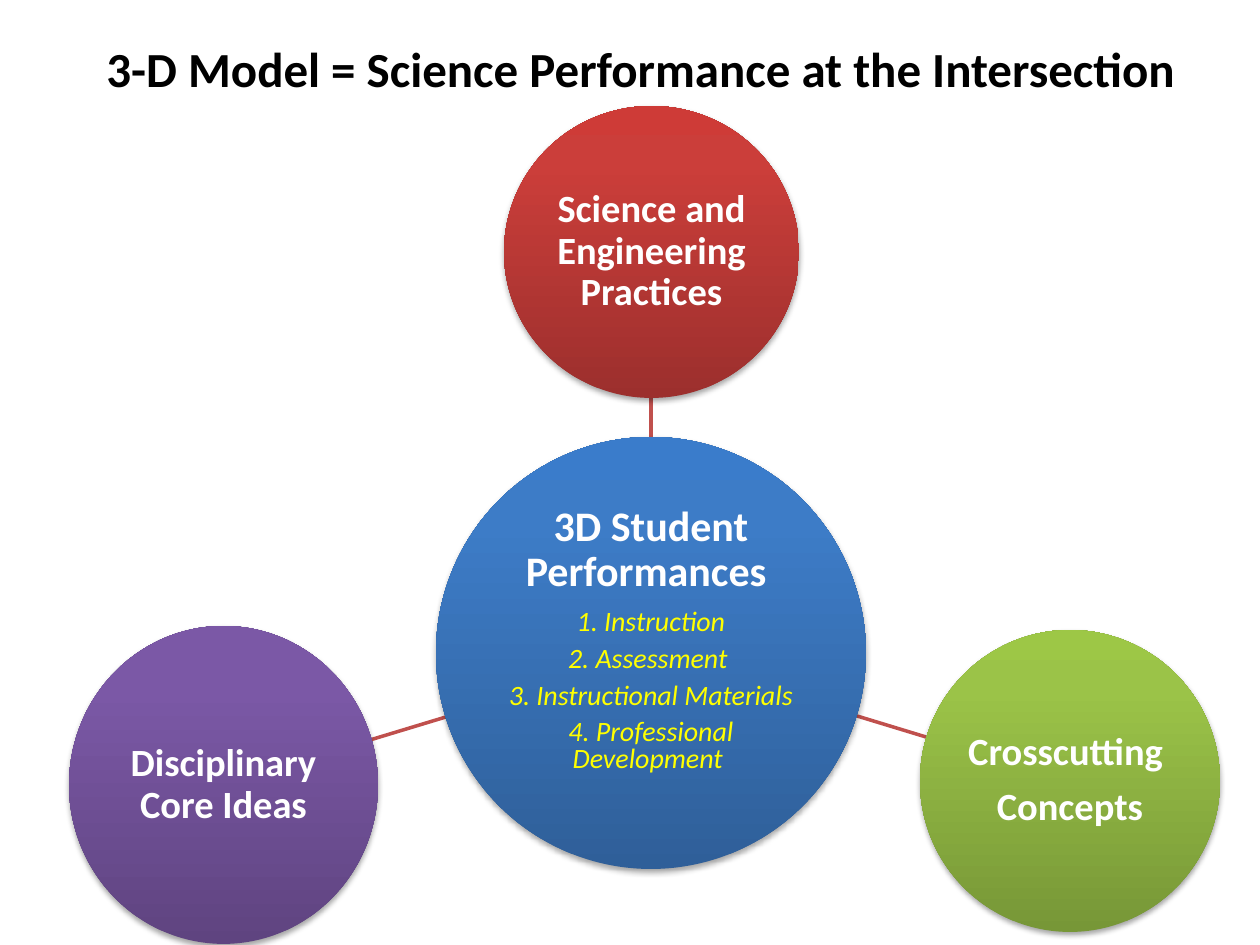
"""Build a slide with three science dimensions linked to a central circle."""
import lxml.etree
import pptx
import pptx.dml.color
import pptx.enum.shapes
import pptx.enum.text
import pptx.oxml
import pptx.oxml.ns
import pptx.util

SCALE = 914400 / 126
COLORS = {
    "title": "000000", "heading": "FFFFFF", "item": "FFFF00", "link": "C0504D",
}
GRADIENTS = {
    "blue": ("2F5F99", "3D7CC7", "3A7CCB"),
    "red": ("9C2F2D", "CB3E3A", "CE3B37"),
    "green": ("779737", "9BC348", "9DC746"),
    "purple": ("5F4480", "7B58A6", "7C57A8"),
}


def px(length):
    return pptx.util.Emu(round(length * SCALE))


def rgb(name):
    return pptx.dml.color.RGBColor.from_string(COLORS[name])


class Diagram:
    def __init__(self, page, font):
        self.page = page
        self.font = font

    def style(self, para, size, color, bold=True, italic=False):
        para.alignment = pptx.enum.text.PP_ALIGN.CENTER
        para.font.name = self.font
        para.font.size = pptx.util.Pt(size)
        para.font.bold = bold
        para.font.italic = italic
        para.font.color.rgb = rgb(color)

    def title(self, text, left, top, width, height):
        box = self.page.shapes.title
        box.left, box.top, box.width, box.height = map(px, (left, top, width, height))
        box.text_frame.text = text
        box.text_frame.vertical_anchor = pptx.enum.text.MSO_ANCHOR.MIDDLE
        self.style(box.text_frame.paragraphs[0], 28, "title")

    def link(self, *ends):
        line = self.page.shapes.add_connector(
            pptx.enum.shapes.MSO_CONNECTOR.STRAIGHT, *map(px, ends))
        line.line.color.rgb = rgb("link")
        line.line.width = pptx.util.Pt(2)
        lxml.etree.SubElement(line._element.spPr, pptx.oxml.ns.qn("a:effectLst"))

    def circle(self, gradient, place, headings, size=22, items=(), bottom=3):
        shape = self.page.shapes.add_shape(
            pptx.enum.shapes.MSO_SHAPE.OVAL, *map(px, place))
        shape.line.fill.background()
        self.shade(shape, GRADIENTS[gradient])
        frame = shape.text_frame
        frame.word_wrap = True
        frame.vertical_anchor = pptx.enum.text.MSO_ANCHOR.MIDDLE
        frame.margin_left = frame.margin_right = frame.margin_top = px(3)
        frame.margin_bottom = px(bottom)
        for index, text in enumerate((*headings, *items)):
            para = frame.add_paragraph() if index else frame.paragraphs[0]
            para.text = text
            if index < len(headings):
                self.style(para, size, "heading")
                para.line_spacing = 0.9
                para.space_after = pptx.util.Pt(round(size * 0.35, 1))
            else:
                self.style(para, 16, "item", bold=False, italic=True)
                para.line_spacing = 0.8
                para.space_after = pptx.util.Pt(5.6)

    def shade(self, shape, colors):
        namespace = pptx.oxml.ns.nsdecls("a")
        stops = "".join(
            f'<a:gs pos="{position}"><a:srgbClr val="{color}"/></a:gs>'
            for position, color in zip((0, 80000, 100000), colors))
        fill = pptx.oxml.parse_xml(
            f'<a:gradFill {namespace} rotWithShape="1"><a:gsLst>{stops}</a:gsLst>'
            '<a:lin ang="16200000" scaled="0"/></a:gradFill>')
        shadow = pptx.oxml.parse_xml(
            f'<a:effectLst {namespace}><a:outerShdw blurRad="40000" dist="23000" '
            'dir="5400000" rotWithShape="0"><a:srgbClr val="000000">'
            '<a:alpha val="35000"/></a:srgbClr></a:outerShdw></a:effectLst>')
        properties = shape._element.spPr
        properties.find(pptx.oxml.ns.qn("a:prstGeom")).addnext(fill)
        properties.append(shadow)


def main():
    deck = pptx.Presentation()
    deck.slide_width = px(1260)
    deck.slide_height = px(945)
    page = deck.slides.add_slide(deck.slide_layouts[5])
    diagram = Diagram(page, "Calibri")
    diagram.title("3-D Model = Science Performance at the Intersection", 21, 13, 1239, 110)
    for ends in ((651, 437, 651, 398), (857, 716, 926, 737), (446, 717, 370, 740)):
        diagram.link(*ends)
    diagram.circle(
        "blue", (436, 437, 430, 432), ["3D Student Performances "], size=24,
        items=["1. Instruction", "2. Assessment ", "3. Instructional Materials",
               "4. Professional Development "], bottom=30)
    diagram.circle("red", (504, 106, 295, 292), ["Science and Engineering Practices"])
    diagram.circle("green", (920, 630, 300, 302), ["Crosscutting ", "Concepts"])
    diagram.circle("purple", (69, 626, 309, 318), ["Disciplinary Core Ideas"])
    deck.save("out.pptx")


if __name__ == "__main__":
    main()
